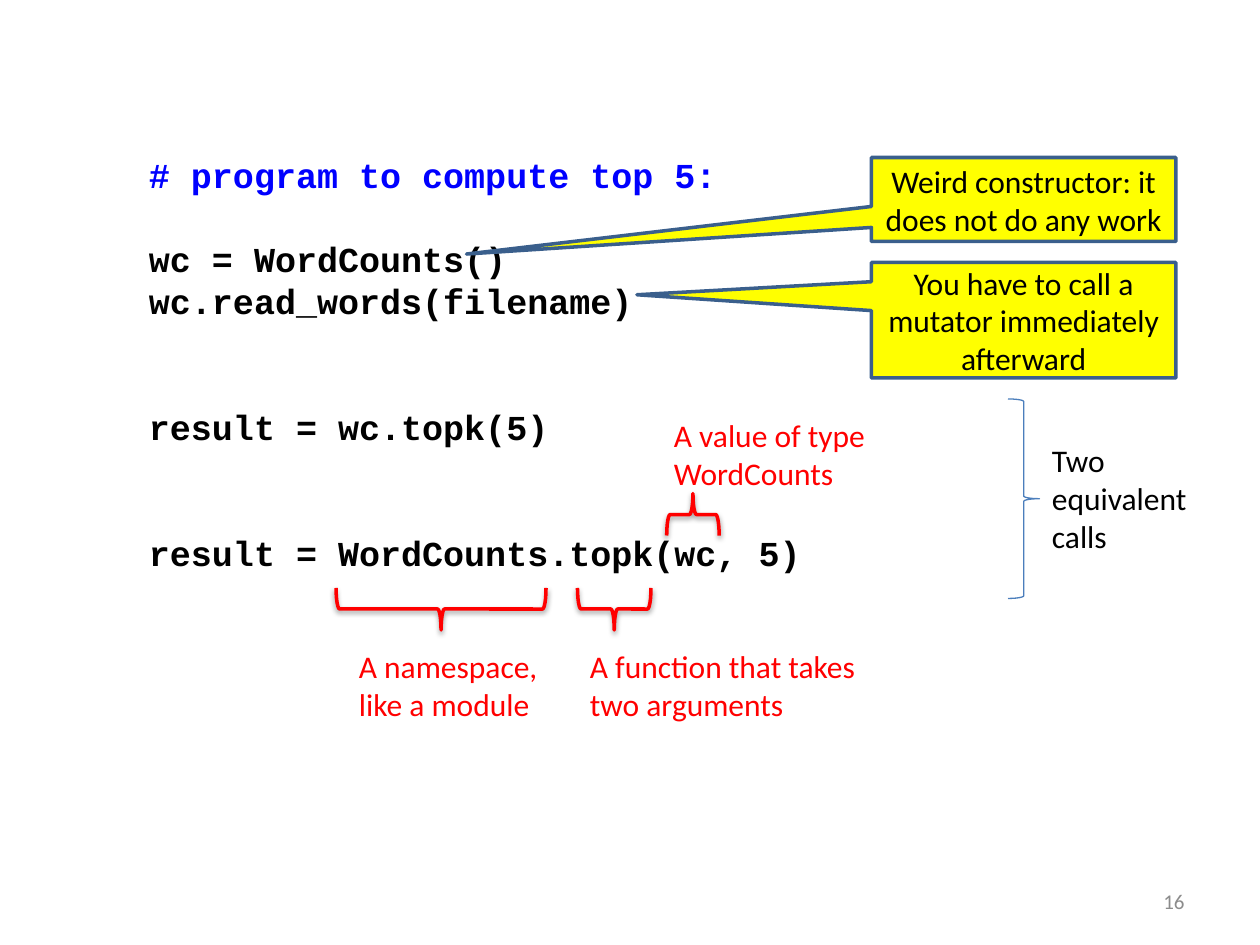
from dataclasses import dataclass

from lxml.etree import SubElement
from pptx import Presentation
from pptx.dml.color import RGBColor
from pptx.enum.shapes import MSO_SHAPE
from pptx.enum.text import MSO_ANCHOR, PP_ALIGN
from pptx.oxml.ns import qn
from pptx.util import Pt

BLACK = RGBColor(0x00, 0x00, 0x00)
BLUE = RGBColor(0x00, 0x00, 0xFF)
RED = RGBColor(0xFF, 0x00, 0x00)
YELLOW = RGBColor(0xFF, 0xFF, 0x00)
GRAY = RGBColor(0x8C, 0x8C, 0x8C)
NAVY = RGBColor(0x3A, 0x5F, 0x8C)
STEEL = RGBColor(0x4B, 0x7E, 0xBC)
LINE_HEIGHT = 24


@dataclass
class Box:
    left: float
    top: float
    width: float
    height: float

    def lengths(self):
        return Pt(self.left), Pt(self.top), Pt(self.width), Pt(self.height)


@dataclass
class CodeLine:
    text: str
    blanks_before: int = 0
    color: RGBColor = BLACK


@dataclass
class Label:
    text: str
    box: Box
    color: RGBColor = RED


@dataclass
class Brace:
    box: Box
    rotation: int = 90
    color: RGBColor = RED
    weight: float = 2
    shadow: bool = True


@dataclass
class Callout:
    text: str
    box: Box
    tip: tuple[float, float]


CODE = [
    CodeLine("# program to compute top 5:", color=BLUE),
    CodeLine("wc = WordCounts()", 1),
    CodeLine("wc.read_words(filename)"),
    CodeLine("result = wc.topk(5)", 2),
    CodeLine("result = WordCounts.topk(wc, 5)", 2),
]
BRACES = [
    Brace(Box(240, 288, 24, 120)),
    Brace(Box(339, 327, 24, 42)),
    Brace(Box(384, 279, 24, 30), 270),
    Brace(Box(576, 228, 18, 114), 0, STEEL, 0.75, False),
]
LABELS = [
    Label("A namespace, like a module", Box(198, 366, 126, 51)),
    Label("A function that takes two arguments", Box(330, 366, 168, 51)),
    Label("A value of type WordCounts", Box(378, 234, 144, 51)),
    Label("Two equivalent calls", Box(594, 248.4, 96, 72.7), BLACK),
]
CALLOUTS = [
    Callout("Weird constructor: it does not do any work",
            Box(498, 90, 174, 48), (-1.83, 0.65)),
    Callout("You have to call a mutator immediately afterward",
            Box(498, 150, 174, 66), (-1.27, -0.22)),
]


def add_run(p, text: str, size: float, color: RGBColor,
            font: str = "Calibri", bold: bool = False) -> None:
    r = p.add_run()
    r.text = text
    r.font.name = font
    r.font.size = Pt(size)
    r.font.bold = bold
    r.font.color.rgb = color


def add_text_frame(s, box: Box):
    tf = s.shapes.add_textbox(*box.lengths()).text_frame
    tf.word_wrap = True
    return tf


def draw_code(s, box: Box, lines: list[CodeLine]) -> None:
    tf = add_text_frame(s, box)
    for i, line in enumerate(lines):
        p = tf.add_paragraph() if i else tf.paragraphs[0]
        p.line_spacing = Pt(LINE_HEIGHT)
        p.space_before = Pt(line.blanks_before * LINE_HEIGHT)
        add_run(p, line.text, 20, line.color, "Courier New", True)


def draw_label(s, label: Label) -> None:
    tf = add_text_frame(s, label.box)
    add_run(tf.paragraphs[0], label.text, 18, label.color)


def add_soft_shadow(sp) -> None:
    effects = sp._element.spPr.find(qn("a:effectLst"))
    shadow = SubElement(effects, qn("a:outerShdw"), blurRad=str(Pt(3.1)),
                        dist=str(Pt(1.6)), dir="5400000", rotWithShape="0")
    color = SubElement(shadow, qn("a:srgbClr"), val=str(BLACK))
    SubElement(color, qn("a:alpha"), val="38000")


def draw_brace(s, brace: Brace) -> None:
    sp = s.shapes.add_shape(MSO_SHAPE.RIGHT_BRACE, *brace.box.lengths())
    sp.rotation = brace.rotation
    sp.fill.background()
    sp.line.color.rgb = brace.color
    sp.line.width = Pt(brace.weight)
    sp.shadow.inherit = False
    if brace.shadow:
        add_soft_shadow(sp)


def draw_callout(s, callout: Callout) -> None:
    sp = s.shapes.add_shape(MSO_SHAPE.RECTANGULAR_CALLOUT, *callout.box.lengths())
    sp.adjustments[0], sp.adjustments[1] = callout.tip
    sp.shadow.inherit = False
    sp.fill.solid()
    sp.fill.fore_color.rgb = YELLOW
    sp.line.color.rgb = NAVY
    sp.line.width = Pt(2)
    tf = sp.text_frame
    tf.word_wrap = True
    tf.vertical_anchor = MSO_ANCHOR.MIDDLE
    p = tf.paragraphs[0]
    p.alignment = PP_ALIGN.CENTER
    add_run(p, callout.text, 18, BLACK)


def draw_page_number(s, text: str, box: Box) -> None:
    tf = add_text_frame(s, box)
    tf.vertical_anchor = MSO_ANCHOR.MIDDLE
    p = tf.paragraphs[0]
    p.alignment = PP_ALIGN.RIGHT
    add_run(p, text, 12, GRAY)


def main() -> None:
    prs = Presentation()
    prs.slide_width, prs.slide_height = Pt(720), Pt(540)
    s = prs.slides.add_slide(prs.slide_layouts[6])
    draw_code(s, Box(78, 84, 450, 250), CODE)
    for brace in BRACES:
        draw_brace(s, brace)
    for label in LABELS:
        draw_label(s, label)
    for callout in CALLOUTS:
        draw_callout(s, callout)
    draw_page_number(s, "16", Box(516, 500.5, 168, 28.75))
    prs.save("out.pptx")


if __name__ == "__main__":
    main()
